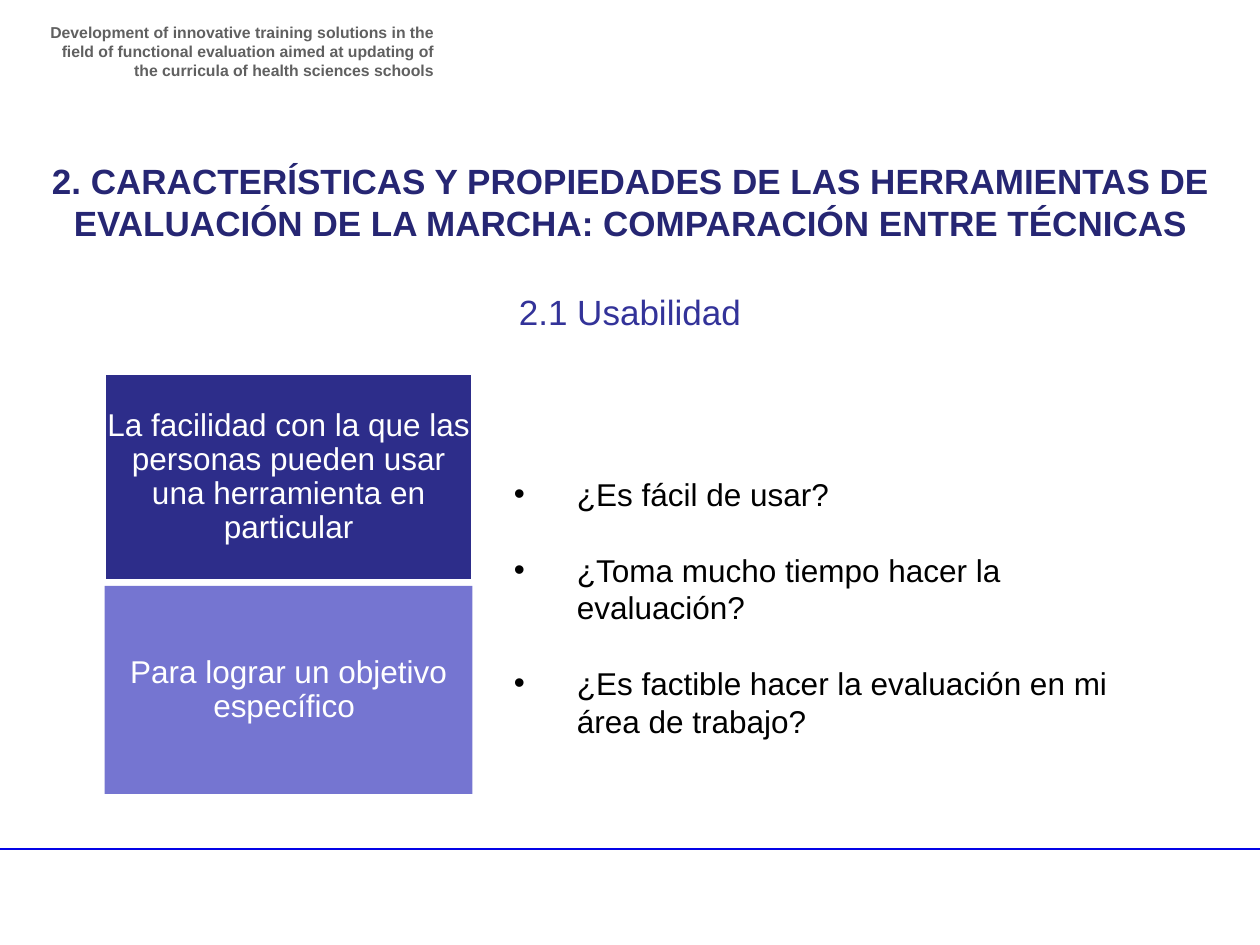
from dataclasses import dataclass
from typing import Optional

from lxml import etree
from pptx import Presentation
from pptx import util as u
from pptx.dml.color import RGBColor
from pptx.enum import shapes, text
from pptx.oxml.ns import qn

FONT = "Arial"
WHITE = "FFFFFF"


@dataclass
class Label:
    wording: str
    place: tuple[float, float, float, float]
    size: int
    color: str
    align: text.PP_ALIGN = text.PP_ALIGN.CENTER
    bold: bool = False


@dataclass
class Block:
    wording: str
    top: float
    fill: str
    outline: Optional[str] = None


LABELS = [
    Label("Development of innovative training solutions in the field of functional "
          "evaluation aimed at updating of the curricula of health sciences schools",
          (0.28, 0.13, 3.26, 0.47), 9, "606060", text.PP_ALIGN.RIGHT, True),
    Label("2. CARACTERÍSTICAS Y PROPIEDADES DE LAS HERRAMIENTAS DE EVALUACIÓN "
          "DE LA MARCHA: COMPARACIÓN ENTRE TÉCNICAS",
          (0.28, 1.22, 9.45, 0.77), 20, "262673", bold=True),
    Label("2.1 Usabilidad", (3.85, 2.26, 2.3, 0.44), 20, "333399"),
]
BLOCKS = [
    Block("La facilidad con la que las personas pueden usar una herramienta en particular",
          2.96, "2D2D8A", WHITE),
    Block("Para lograr un objetivo específico ", 4.65, "7575D1"),
]
QUESTIONS = [
    "¿Es fácil de usar?",
    "¿Toma mucho tiempo hacer la evaluación?",
    "¿Es factible hacer la evaluación en mi área de trabajo?",
]


def rgb(value: str) -> RGBColor:
    return RGBColor.from_string(value)


def add_run(para, wording: str, size: int, color: str, bold: bool = False) -> None:
    span = para.add_run()
    span.text = wording
    span.font.name = FONT
    span.font.size = u.Pt(size)
    span.font.bold = bold
    span.font.color.rgb = rgb(color)


def add_text_box(page, place: tuple[float, float, float, float]):
    box = page.shapes.add_textbox(*map(u.Inches, place))
    box.text_frame.word_wrap = True
    return box.text_frame


def add_label(page, label: Label) -> None:
    para = add_text_box(page, label.place).paragraphs[0]
    para.alignment = label.align
    add_run(para, label.wording, label.size, label.color, label.bold)


def add_block(page, block: Block) -> None:
    place = map(u.Inches, (0.83, block.top, 2.92, 1.65))
    box = page.shapes.add_shape(shapes.MSO_SHAPE.RECTANGLE, *place)
    box.shadow.inherit = False
    box.fill.solid()
    box.fill.fore_color.rgb = rgb(block.fill)
    if block.outline:
        box.line.color.rgb = rgb(block.outline)
        box.line.width = u.Pt(2)
    else:
        box.line.fill.background()
    frame = box.text_frame
    frame.word_wrap = True
    frame.vertical_anchor = text.MSO_ANCHOR.MIDDLE
    for side in ("left", "right", "top", "bottom"):
        setattr(frame, f"margin_{side}", u.Inches(0.01))
    para = frame.paragraphs[0]
    para.alignment = text.PP_ALIGN.CENTER
    para.line_spacing = 0.9
    add_run(para, block.wording, 18, WHITE)


def add_questions(page, questions: list[str]) -> None:
    frame = add_text_box(page, (3.98, 3.72, 5.28, 2.52))
    for index, question in enumerate(questions):
        para = frame.add_paragraph() if index else frame.paragraphs[0]
        if index:
            para.space_before = u.Pt(21.6)
        props = para._p.get_or_add_pPr()
        props.set("marL", str(u.Inches(0.5)))
        props.set("indent", str(-u.Inches(0.5)))
        etree.SubElement(props, qn("a:buFont"), typeface=FONT)
        etree.SubElement(props, qn("a:buChar"), char="•")
        add_run(para, question, 18, "000000")


def add_footer_line(page) -> None:
    ends = map(u.Inches, (-0.05, 6.74, 10, 6.74))
    line = page.shapes.add_connector(shapes.MSO_CONNECTOR.STRAIGHT, *ends)
    line.line.color.rgb = rgb("0404E6")
    line.line.width = u.Pt(1)
    etree.SubElement(line._element.spPr, qn("a:effectLst"))


def main() -> None:
    """Build the usability slide on gait evaluation tools."""
    deck = Presentation()
    deck.slide_width, deck.slide_height = u.Inches(10), u.Inches(7.5)
    page = deck.slides.add_slide(deck.slide_layouts[6])
    add_footer_line(page)
    for label in LABELS:
        add_label(page, label)
    for block in BLOCKS:
        add_block(page, block)
    add_questions(page, QUESTIONS)
    deck.save("out.pptx")


if __name__ == "__main__":
    main()
